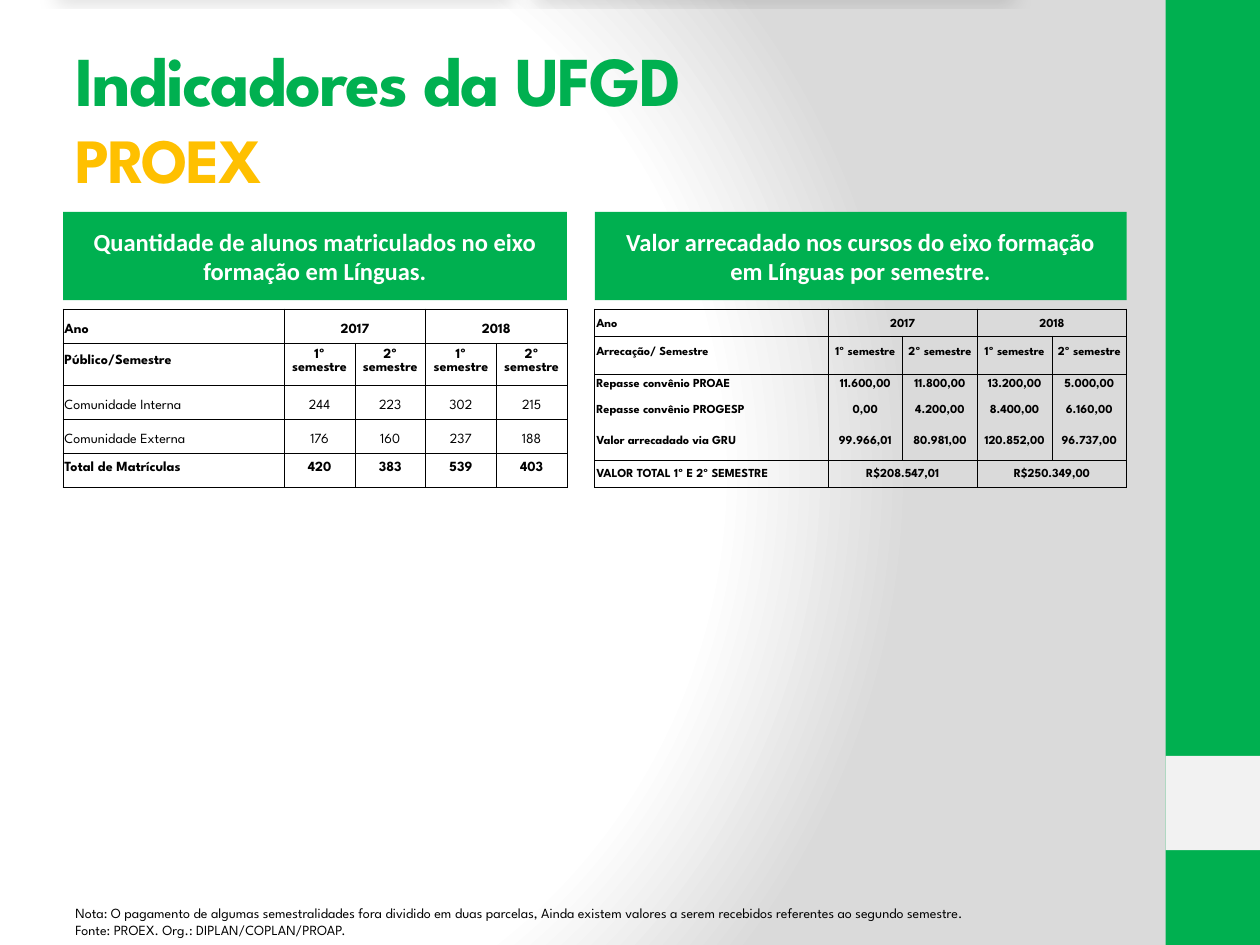
import copy

import pptx
import pptx.dml.color
import pptx.enum.shapes
import pptx.enum.text
import pptx.oxml
import pptx.oxml.ns
import pptx.util
from pptx.util import Cm

THEME = {
    "heading_font": "League Spartan", "header_font": "Calibri",
    "green": "00B050", "yellow": "FFC000", "pale": "F2F2F2",
    "white": "FFFFFF", "black": "000000", "grey": "DADADA",
    "title": 40, "subtitle": 36, "header": 14, "note": 8,
}
ALIGN = pptx.enum.text.PP_ALIGN
ANCHOR = pptx.enum.text.MSO_ANCHOR
NS = 'xmlns:a="http://schemas.openxmlformats.org/drawingml/2006/main"'

TITLE = ("Indicadores da UFGD", "PROEX")
NOTES = (
    "Nota: O pagamento de algumas semestralidades fora dividido em duas parcelas, "
    "Ainda existem valores a serem recebidos referentes ao segundo semestre.",
    "Fonte: PROEX. Org.: DIPLAN/COPLAN/PROAP.",
)
SEMESTERS = ["1º semestre", "2º semestre"] * 2
YEARS = ["Ano", "2017", None, "2018", None]  # None continues the cell on its left
PANELS = [
    {
        "header": "Quantidade de alunos matriculados no eixo formação em Línguas.",
        "left": 1.27, "width": 10.16, "label_width": 4.46, "size": 8,
        "heights": [0.69, 0.84, 0.69, 0.69, 0.69],
        "middle_rows": {1, 4}, "plain_rows": {2, 3}, "open_below": set(),
        "rows": [
            YEARS,
            ["Público/Semestre"] + SEMESTERS,
            ["Comunidade Interna", "244", "223", "302", "215"],
            ["Comunidade Externa", "176", "160", "237", "188"],
            ["Total de Matrículas", "420", "383", "539", "403"],
        ],
    },
    {
        "header": "Valor arrecadado nos cursos do eixo formação em Línguas por semestre.",
        "left": 11.99, "width": 10.72, "label_width": 4.7, "size": 7,
        "heights": [0.55, 0.76, 0.53, 0.53, 0.69, 0.53],
        "middle_rows": {1, 2, 3, 4}, "plain_rows": set(), "open_below": {2, 3},
        "rows": [
            YEARS,
            ["Arrecação/ Semestre"] + SEMESTERS,
            ["Repasse convênio PROAE", "11.600,00", "11.800,00", "13.200,00", "5.000,00"],
            ["Repasse convênio PROGESP", "0,00", "4.200,00", "8.400,00", "6.160,00"],
            ["Valor arrecadado via GRU", "99.966,01", "80.981,00", "120.852,00", "96.737,00"],
            ["VALOR TOTAL 1º E 2º SEMESTRE", "R$208.547,01", None, "R$250.349,00", None],
        ],
    },
]


def color(name):
    return pptx.dml.color.RGBColor.from_string(THEME[name])


def write(paragraph, text, *, size, font="heading_font", ink="black", bold=False,
          align=ALIGN.LEFT, tracking=None):
    paragraph.alignment = align
    run = paragraph.add_run()
    run.text = text
    run.font.size = pptx.util.Pt(size)
    run.font.name = THEME[font]
    run.font.bold = bold
    run.font.color.rgb = color(ink)
    if tracking is not None:
        run.font._element.set("spc", str(tracking))
    return run


def place(shape, left, top, width, height):
    shape.left, shape.top = Cm(left), Cm(top)
    shape.width, shape.height = Cm(width), Cm(height)


def paint_background(slide):
    slide.background.fill.gradient()
    stops = "".join(
        f'<a:gs pos="{at * 1000}"><a:srgbClr val="{THEME[name]}"/></a:gs>'
        for at, name in ((0, "white"), (75, "white"), (100, "grey")))
    gradient = pptx.oxml.parse_xml(
        f'<a:gradFill {NS} rotWithShape="1"><a:gsLst>{stops}</a:gsLst><a:path path="circle">'
        '<a:fillToRect l="20000" t="50000" r="100000" b="50000"/></a:path></a:gradFill>')
    old = next(slide.element.iter(pptx.oxml.ns.qn("a:gradFill")))
    old.getparent().replace(old, gradient)


def add_side_block(slide, top, height, fill):
    block = slide.shapes.add_shape(
        pptx.enum.shapes.MSO_SHAPE.RECTANGLE, Cm(23.5), Cm(top), Cm(1.9), Cm(height))
    block.shadow.inherit = False
    block.fill.solid()
    block.fill.fore_color.rgb = color(fill)
    block.line.fill.background()


def fill_title(title):
    place(title, 1.27, 0.76, 21.16, 3.18)
    title.text_frame.auto_size = pptx.enum.text.MSO_AUTO_SIZE.NONE
    title.text_frame.vertical_anchor = ANCHOR.MIDDLE
    paragraph = title.text_frame.paragraphs[0]
    style = {"bold": True, "tracking": -100}
    first = write(paragraph, TITLE[0], size=THEME["title"], ink="green", **style)
    paragraph.add_line_break()
    # The break keeps the size of its own line
    paragraph._p[-1].insert(0, copy.deepcopy(first.font._element))
    write(paragraph, TITLE[1], size=THEME["subtitle"], ink="yellow", **style)


def fill_header(header, panel):
    place(header, panel["left"], 4.27, panel["width"], 1.78)
    header.fill.solid()
    header.fill.fore_color.rgb = color("green")
    header._element.spPr.append(pptx.oxml.parse_xml(
        f'<a:effectLst {NS}><a:outerShdw blurRad="152400" dist="317500" dir="5400000" '
        'sx="90000" sy="-19000" rotWithShape="0"><a:srgbClr val="000000">'
        '<a:alpha val="15000"/></a:srgbClr></a:outerShdw></a:effectLst>'))
    header.text_frame.auto_size = pptx.enum.text.MSO_AUTO_SIZE.NONE
    header.text_frame.vertical_anchor = ANCHOR.MIDDLE
    write(header.text_frame.paragraphs[0], panel["header"], size=THEME["header"],
          font="header_font", ink="white", bold=True, align=ALIGN.CENTER)


def set_borders(cell, open_sides):
    properties = cell._tc.get_or_add_tcPr()
    for position, side in enumerate("LRTB"):
        paint = ("<a:noFill/>" if side in open_sides else
                 f'<a:solidFill><a:srgbClr val="{THEME["black"]}"/></a:solidFill>')
        properties.insert(position, pptx.oxml.parse_xml(
            f'<a:ln{side} {NS} w="6350">{paint}</a:ln{side}>'))


def add_panel_table(slide, panel):
    rows = panel["rows"]
    table = slide.shapes.add_table(
        len(rows), len(YEARS), Cm(panel["left"]), Cm(6.23),
        Cm(panel["width"]), Cm(sum(panel["heights"]))).table
    table.first_row = table.horz_banding = False
    value_width = (panel["width"] - panel["label_width"]) / len(SEMESTERS)
    for c, column in enumerate(table.columns):
        column.width = Cm(value_width if c else panel["label_width"])
    for r, texts in enumerate(rows):
        table.rows[r].height = Cm(panel["heights"][r])
        open_sides = (("B" if r in panel["open_below"] else "")
                      + ("T" if r - 1 in panel["open_below"] else ""))
        for c, text in enumerate(texts):
            cell = table.cell(r, c)
            cell.fill.background()
            set_borders(cell, open_sides)
            if text is None:
                table.cell(r, c - 1).merge(cell)
                continue
            cell.margin_left = cell.margin_right = cell.margin_top = Cm(0.03)
            cell.margin_bottom = Cm(0.13)
            cell.vertical_anchor = ANCHOR.MIDDLE if r in panel["middle_rows"] else ANCHOR.BOTTOM
            write(cell.text_frame.paragraphs[0], text, size=panel["size"],
                  bold=r not in panel["plain_rows"],
                  align=ALIGN.CENTER if c else ALIGN.LEFT)


def add_notes(slide):
    frame = slide.shapes.add_textbox(Cm(1.27), Cm(18.11), Cm(22.05), Cm(0.94)).text_frame
    frame.word_wrap = True
    for i, note in enumerate(NOTES):
        paragraph = frame.add_paragraph() if i else frame.paragraphs[0]
        write(paragraph, note, size=THEME["note"])


def main():
    deck = pptx.Presentation()
    deck.slide_width, deck.slide_height = Cm(25.4), Cm(19.05)
    slide = deck.slides.add_slide(deck.slide_layouts.get_by_name("Comparison"))
    paint_background(slide)
    add_side_block(slide, 0, 19.05, "green")
    add_side_block(slide, 15.24, 1.9, "pale")
    fill_title(slide.shapes.title)
    bodies = {p.placeholder_format.idx: p for p in slide.placeholders}
    for header_idx, panel in zip((1, 3), PANELS):
        fill_header(bodies[header_idx], panel)
        add_panel_table(slide, panel)
        unused = bodies[header_idx + 1]._element
        unused.getparent().remove(unused)
    add_notes(slide)
    deck.save("out.pptx")


if __name__ == "__main__":
    main()
